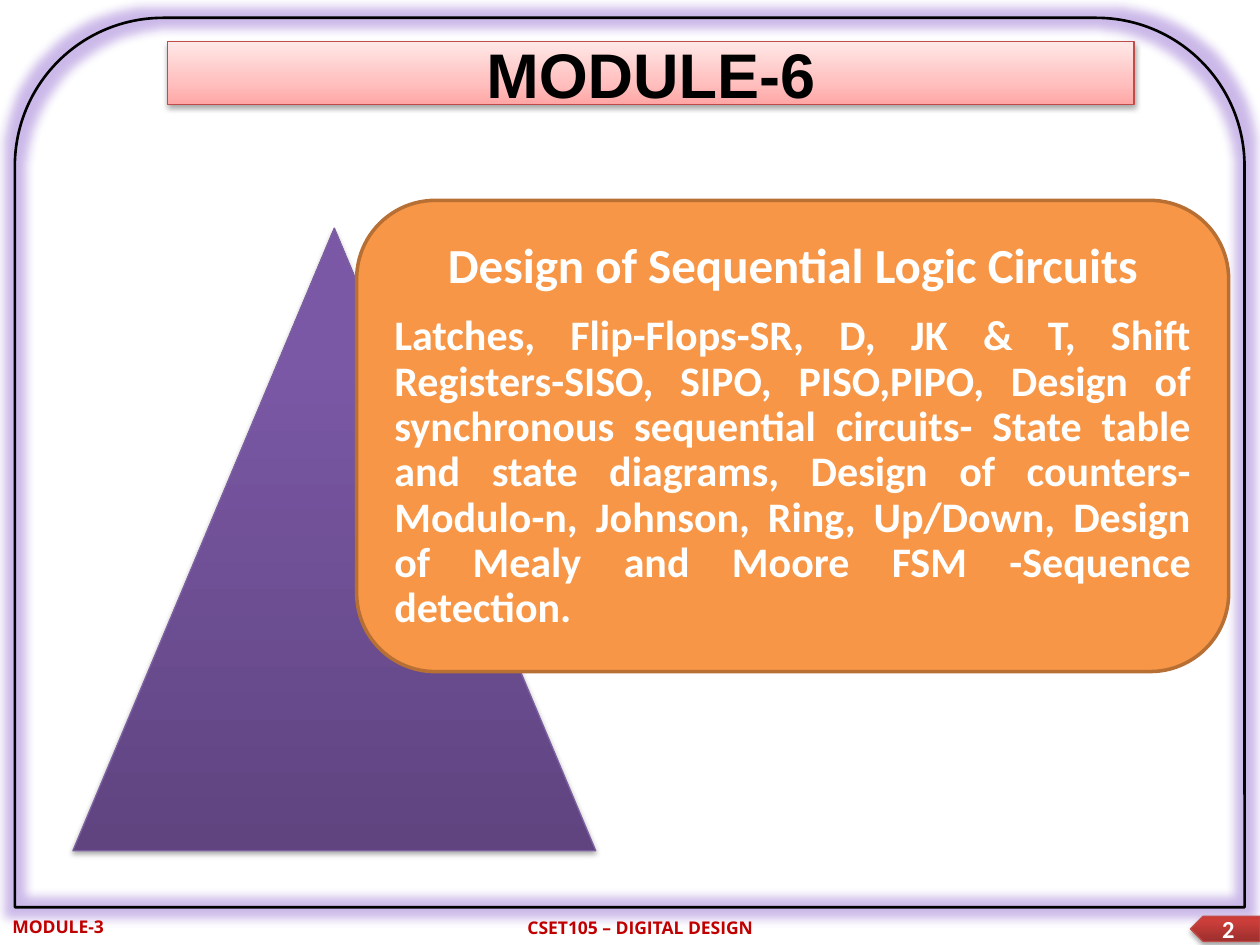
import copy

from lxml import etree
from pptx import Presentation
from pptx import util as u
from pptx.dml.color import RGBColor
from pptx.enum import shapes, text
from pptx.oxml.ns import qn

BLACK = RGBColor(0x00, 0x00, 0x00)
WHITE = RGBColor(0xFF, 0xFF, 0xFF)
DARK_RED = RGBColor(0xC0, 0x00, 0x00)
RED_LINE = RGBColor(0xBF, 0x4C, 0x48)
PURPLE_LINE = RGBColor(0x7D, 0x60, 0xA0)
GLOW = RGBColor(0x7E, 0x4F, 0xC8)
ORANGE = RGBColor(0xF7, 0x96, 0x46)
ORANGE_LINE = RGBColor(0xB7, 0x6F, 0x34)
PINKS = [(0, RGBColor(0xFF, 0xA6, 0xA5)), (0.35, RGBColor(0xFF, 0xC0, 0xBF)),
         (1, RGBColor(0xFF, 0xE7, 0xE7))]
REDS = [(0, RGBColor(0x9C, 0x2F, 0x2D)), (0.8, RGBColor(0xCB, 0x3E, 0x3A)),
        (1, RGBColor(0xCE, 0x3B, 0x37))]
PURPLES = [(0, RGBColor(0x5F, 0x44, 0x80)), (0.8, RGBColor(0x7B, 0x58, 0xA6)),
           (1, RGBColor(0x7C, 0x57, 0xA8))]


def write(paragraph, words, size, font="Calibri", color=WHITE,
          align=text.PP_ALIGN.CENTER):
    paragraph.alignment = align
    run = paragraph.add_run()
    run.text = words
    run.font.size = u.Pt(size)
    run.font.name = font
    run.font.bold = True
    run.font.color.rgb = color


def shade(shape, stops, line_color):
    """Give a shape a rising gradient, a thin line and a soft shadow."""
    shape.fill.gradient()
    shape.fill.gradient_angle = 90
    stop_list = shape.fill.gradient_stops
    first = shape._element.spPr.find(".//" + qn("a:gs"))
    first.addnext(copy.deepcopy(first))
    for stop, (position, color) in zip(shape.fill.gradient_stops, stops):
        stop.position = position
        stop.color.rgb = color
    shape.line.color.rgb = line_color
    shape.line.width = u.Pt(0.75)
    shape.shadow.inherit = False
    effects = shape._element.spPr.find(qn("a:effectLst"))
    shadow = etree.SubElement(effects, qn("a:outerShdw"), blurRad=str(u.Pt(3.1)),
                              dist=str(u.Pt(1.8)), dir="5400000", rotWithShape="0")
    color = etree.SubElement(shadow, qn("a:srgbClr"), val=str(BLACK))
    etree.SubElement(color, qn("a:alpha"), val="35000")


presentation = Presentation()
presentation.slide_width = u.Cm(25.4)
presentation.slide_height = u.Cm(19.05)
slide = presentation.slides.add_slide(presentation.slide_layouts[1])
title, body = slide.placeholders[0], slide.placeholders[1]

# Title in a rounded banner
title.left, title.top = u.Cm(3.38), u.Cm(0.84)
title.width, title.height = u.Cm(19.48), u.Cm(1.27)
banner = etree.SubElement(title._element.spPr, qn("a:prstGeom"), prst="roundRect")
etree.SubElement(banner, qn("a:avLst"))
shade(title, PINKS, RED_LINE)
title.text_frame.auto_size = text.MSO_AUTO_SIZE.NONE
title.text_frame.vertical_anchor = text.MSO_ANCHOR.MIDDLE
write(title.text_frame.paragraphs[0], "MODULE-6", 36, font="Arial", color=BLACK)

# Glowing frame around the slide
frame = slide.shapes.add_shape(shapes.MSO_SHAPE.ROUND_2_SAME_RECTANGLE,
                               u.Cm(0.3), u.Cm(0.36), u.Cm(24.79), u.Cm(17.93))
frame.fill.background()
frame.line.color.rgb = BLACK
frame.line.width = u.Pt(1.5)
frame.shadow.inherit = False
glow = etree.SubElement(frame._element.spPr.find(qn("a:effectLst")), qn("a:glow"),
                        rad=str(u.Pt(11)))
glow_color = etree.SubElement(glow, qn("a:srgbClr"), val=str(GLOW))
etree.SubElement(glow_color, qn("a:alpha"), val="40000")

# Footer labels
for left, top, width, words, align in [
        (7.19, 18.36, 11.43, "CSET105 – DIGITAL DESIGN", text.PP_ALIGN.CENTER),
        (0, 18.34, 4.65, "MODULE-3", text.PP_ALIGN.LEFT)]:
    label = slide.shapes.add_textbox(u.Cm(left), u.Cm(top), u.Cm(width), u.Cm(0.69))
    label.text_frame.word_wrap = True
    write(label.text_frame.paragraphs[0], words, 10, font="Open Sans",
          color=DARK_RED, align=align)

# Page number tag, pointing left
tag = slide.shapes.add_shape(shapes.MSO_SHAPE.PENTAGON,
                             u.Cm(24), u.Cm(18.47), u.Cm(1.4), u.Cm(0.51))
tag._element.spPr.find(qn("a:xfrm")).set("flipH", "1")
shade(tag, REDS, RED_LINE)
tag.text_frame.vertical_anchor = text.MSO_ANCHOR.MIDDLE
write(tag.text_frame.paragraphs[0], "2", 14)

# Triangle behind the topic card
triangle = slide.shapes.add_shape(shapes.MSO_SHAPE.ISOSCELES_TRIANGLE,
                                  u.Cm(1.47), u.Cm(4.6), u.Cm(10.54), u.Cm(12.55))
shade(triangle, PURPLES, PURPLE_LINE)

card = slide.shapes.add_shape(shapes.MSO_SHAPE.ROUNDED_RECTANGLE,
                              u.Cm(7.19), u.Cm(4.04), u.Cm(17.58), u.Cm(9.5))
card.fill.solid()
card.fill.fore_color.rgb = ORANGE
card.line.color.rgb = ORANGE_LINE
card.line.width = u.Pt(2)
card.shadow.inherit = False

# Topics, placed in front of the card
slide.shapes._spTree.append(body._element)
body.left, body.top = u.Cm(7.65), u.Cm(4.5)
body.width, body.height = u.Cm(16.66), u.Cm(8.59)
topics = body.text_frame
topics.auto_size = text.MSO_AUTO_SIZE.NONE
topics.vertical_anchor = text.MSO_ANCHOR.MIDDLE
topics.margin_left = topics.margin_right = u.Cm(0.3)
topics.margin_top = topics.margin_bottom = u.Cm(0.3)
write(topics.paragraphs[0], "Design of Sequential Logic Circuits", 28)
write(topics.add_paragraph(),
      "Latches, Flip-Flops-SR, D, JK & T, Shift Registers-SISO, SIPO, PISO,PIPO, "
      "Design of synchronous sequential circuits- State table and state diagrams, "
      "Design of counters-Modulo-n, Johnson, Ring, Up/Down, "
      "Design of Mealy and Moore FSM -Sequence detection.",
      24, align=text.PP_ALIGN.JUSTIFY)
for paragraph in topics.paragraphs:
    paragraph.line_spacing = 0.9
    paragraph.space_before = u.Pt(0)
    paragraph.space_after = u.Pt(12)
    properties = paragraph._p.get_or_add_pPr()
    properties.set("marL", "0")
    properties.set("indent", "0")
    etree.SubElement(properties, qn("a:buNone"))

presentation.save("out.pptx")
